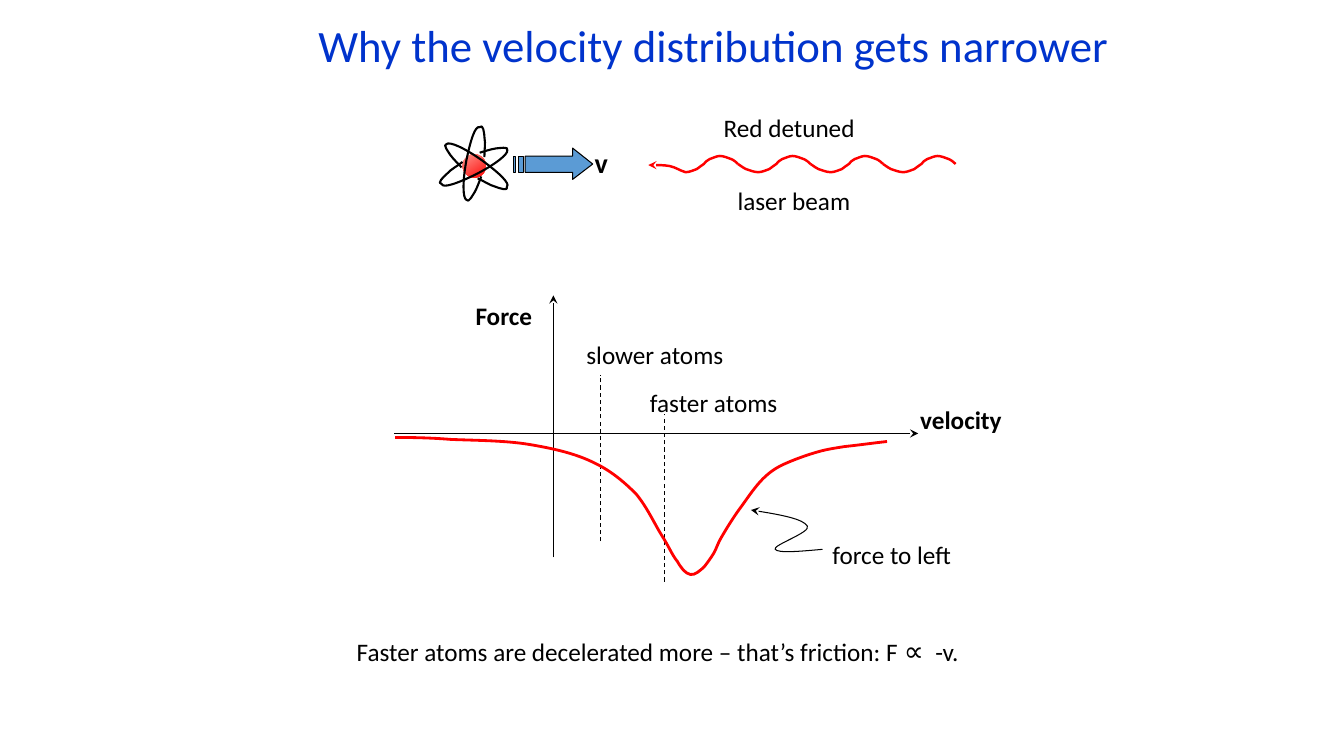
from dataclasses import dataclass

from lxml import etree
from pptx import Presentation
from pptx.dml.color import RGBColor
from pptx.enum import dml, shapes, text
from pptx.oxml import ns
from pptx.util import Pt


@dataclass(frozen=True)
class Theme:
    """Colours and type sizes of the slide."""
    font: str = "Calibri"
    ink: RGBColor = RGBColor(0x00, 0x00, 0x00)
    title: RGBColor = RGBColor(0x00, 0x33, 0xCC)
    red: RGBColor = RGBColor(0xFE, 0x00, 0x00)
    pale_red: RGBColor = RGBColor(0xFE, 0xA2, 0x98)
    curve: RGBColor = RGBColor(0xFF, 0x00, 0x00)
    arrow: RGBColor = RGBColor(0x5B, 0x9B, 0xD5)
    title_size: int = 32
    symbol_size: int = 20
    body_size: int = 18


theme = Theme()
deck = Presentation()
deck.slide_width, deck.slide_height = Pt(960), Pt(540)
page = deck.slides.add_slide(deck.slide_layouts[6])


def stroke(shape, color, width, arrowhead=False):
    """Set the line of a shape, with a stealth arrowhead at its end if asked."""
    shape.line.color.rgb = color
    shape.line.width = Pt(width)
    if arrowhead:
        line = shape.line._get_or_add_ln()
        etree.SubElement(line, ns.qn("a:tailEnd"), type="stealth")


def draw_curve(points, color, width, arrowhead=False):
    """Draw an open Bezier path: a start, then two controls and an end per segment."""
    start, *rest = [(Pt(x), Pt(y)) for x, y in points]
    builder = page.shapes.build_freeform(*start)
    builder.add_line_segments(rest, close=False)
    shape = builder.convert_to_shape()
    steps = shape._element.xpath(".//a:lnTo")
    for i in range(0, len(steps), 3):
        bezier = etree.Element(ns.qn("a:cubicBezTo"))
        steps[i].addprevious(bezier)
        for step in steps[i:i + 3]:
            bezier.append(step[0])
            step.getparent().remove(step)
    shape.fill.background()
    shape.shadow.inherit = False
    stroke(shape, color, width, arrowhead)
    return shape


# Laser beam: four wave periods, the last one running out into the arrowhead
WAVE_START = [
    (0, 0), (-0.7, -0.7), (-2.9, -2.9), (-5, -3.6),
    (-7.2, -4.3), (-10.1, -5.8), (-13, -5.8),
    (-15.1, -5.8), (-18, -4.3), (-20.2, -3.6),
    (-22.3, -2.9), (-23, -1.4), (-24.5, 0),
    (-25.9, 0.7), (-27.4, 2.2), (-29.5, 3.6),
    (-31.7, 4.3), (-34.6, 5.8), (-37.4, 5.8),
]
WAVE_END = [(-40.3, 5.8), (-43.9, 4.3), (-46.1, 3.6),
            (-49, 2.2), (-50.4, 0.7), (-51.8, 0)]
WAVE_TIP = [(-41, 5), (-44.6, 2.2), (-49, 1.4),
            (-53.3, 0.7), (-61.2, 0.7), (-64.1, 0.7)]
for period in range(4):
    is_tip = period == 3
    wave = WAVE_START + (WAVE_TIP if is_tip else WAVE_END)
    right = 682.6 - 51.8 * period
    draw_curve([(right + x, 117.2 + y) for x, y in wave],
               theme.curve, 1.75, arrowhead=is_tip)

# Atom: a nucleus and one orbit turned three ways
nucleus = page.shapes.add_shape(
    shapes.MSO_SHAPE.OVAL, Pt(330.5), Pt(110.2), Pt(16.6), Pt(16.6))
nucleus.rotation = 10.6
nucleus.shadow.inherit = False
nucleus.line.fill.background()
nucleus.fill.gradient()
nucleus.fill.gradient_angle = 315
for stop, color, position in zip(nucleus.fill.gradient_stops,
                                 (theme.pale_red, theme.red), (0, 1)):
    stop.color.rgb = color
    stop.position = position

ORBIT = [
    (3.5, 8.3), (7.4, 8.5), (13.3, 10.3), (17, 9.9),
    (20.9, 10.1), (27.7, 10.1), (25.2, 7.1),
    (26.6, 4.4), (17.4, -0.1), (2.2, -4.9),
    (-12.2, -9.2), (-24, -10.5), (-25.4, -7.8),
    (-28.2, -6.8), (-22.2, -2.8), (-20.2, -1.2),
    (-17.2, 0.9), (-11.7, 3.6), (-9.9, 4.5),
]
for center_x, center_y, angle in [(340.6, 118.4, 18.6), (338.4, 117, 263.6),
                                  (339.1, 119.2, 136.1)]:
    orbit = draw_curve([(center_x + x, center_y + y) for x, y in ORBIT], theme.ink, 1.5)
    orbit.rotation = angle

# Velocity arrow with two stripes behind it
ARROW = [(409, 105.8), (409, 111.6), (375.1, 111.6), (375.1, 123.1),
         (409, 123.1), (409, 128.2), (423.4, 117.2)]
STRIPES = [[(left, 111.6), (left, 123.1), (right, 123.1), (right, 111.6)]
           for left, right in [(370.1, 373.7), (366.5, 367.9)]]
builder = page.shapes.build_freeform(Pt(ARROW[0][0]), Pt(ARROW[0][1]))
for index, contour in enumerate([ARROW, *STRIPES]):
    corners = [(Pt(x), Pt(y)) for x, y in contour]
    if index:
        builder.move_to(*corners[0])
    builder.add_line_segments(corners[1:], close=True)
velocity_arrow = builder.convert_to_shape()
velocity_arrow.shadow.inherit = False
velocity_arrow.fill.solid()
velocity_arrow.fill.fore_color.rgb = theme.arrow
stroke(velocity_arrow, theme.ink, 0.75)

# Axes with arrowheads, and dashed markers for the two groups of atoms
for x1, y1, x2, y2, is_axis in [
    (474.5, 415.4, 474.5, 295.9, False),
    (429.1, 386.6, 429.1, 267.8, False),
    (281.5, 309.6, 655.9, 309.6, True),
    (395.3, 398.2, 395.3, 211, True),
]:
    rule = page.shapes.add_connector(
        shapes.MSO_CONNECTOR.STRAIGHT, Pt(x1), Pt(y1), Pt(x2), Pt(y2))
    etree.SubElement(rule._element.spPr, ns.qn("a:effectLst"))
    if not is_axis:
        rule.line.dash_style = dml.MSO_LINE.DASH
    stroke(rule, theme.ink, 0.75, arrowhead=is_axis)

# Pointer from the label to the force curve
draw_curve([
    (587.5, 392.4), (571.7, 393.8), (555.8, 395.3), (553.7, 392.4),
    (551.5, 389.5), (579.6, 380.2), (576.7, 375.8),
    (573.8, 370.8), (555.1, 367.2), (536.4, 364.3),
], theme.ink, 0.75, arrowhead=True)

# Force against velocity
draw_curve([
    (282.2, 312.5), (288.7, 312.5), (305.3, 312.5), (321.8, 313.9),
    (337.7, 314.6), (360.7, 314.6), (378, 317.5),
    (395.3, 320.4), (411.1, 324), (424.1, 330.5),
    (436.3, 336.2), (445.7, 344.2), (454.3, 352.8),
    (462.2, 362.2), (468, 375.1), (473, 383),
    (478.1, 391), (480.2, 396.7), (483.8, 401),
    (486.7, 406.1), (489.6, 409.7), (493.2, 410.4),
    (496.1, 411.1), (500.4, 407.5), (503.3, 404.6),
    (505.4, 401.8), (507.6, 398.9), (509.8, 395.3),
    (511.9, 391.7), (512.6, 388.1), (516.2, 382.3),
    (519.1, 377.3), (524.9, 367.9), (529.9, 361.4),
    (535, 354.2), (540, 347), (545, 342),
    (550.1, 337), (554.4, 334.1), (560.9, 331.2),
    (567.4, 328.3), (575.3, 325.4), (582.5, 323.3),
    (589.7, 321.1), (594.7, 320.4), (603.4, 319),
    (611.3, 318.2), (627.1, 316.1), (633.6, 315.4),
], theme.curve, 2)

# Title, labels and conclusion; each holds a list of spans
TITLE = "Why the velocity distribution gets narrower"
CONCLUSION = ["Faster atoms are decelerated more – that’s friction: F ", "∝", "  -v."]
body, symbol = theme.body_size, theme.symbol_size
for spans, left, top, width, height, size, bold in [
    ([TITLE], 220.3, 9.4, 599, 46.1, theme.title_size, False),
    (["Red detuned"], 509.8, 77, 109.4, 28.8, body, False),
    (["laser beam"], 519.8, 128.9, 95.8, 28.8, body, False),
    (["v"], 417.6, 100.1, 24.5, 31.7, symbol, True),
    (["Force"], 332.6, 211, 55.4, 28.8, body, True),
    (["velocity"], 650.2, 285.1, 73.4, 28.8, body, True),
    (["slower atoms"], 411.8, 239, 113, 28.8, body, False),
    (["faster atoms"], 457.2, 272.9, 106.6, 28.8, body, False),
    (["force to left"], 587.5, 381.6, 103.7, 28.8, body, False),
    (CONCLUSION, 247.7, 449.3, 451.4, 31.7, body, False),
]:
    is_title = spans == [TITLE]
    box = page.shapes.add_textbox(Pt(left), Pt(top), Pt(width), Pt(height))
    box.text_frame.word_wrap = is_title
    box.text_frame.auto_size = text.MSO_AUTO_SIZE.SHAPE_TO_FIT_TEXT
    para = box.text_frame.paragraphs[0]
    para.font.name = theme.font
    para.font.size = Pt(size)
    para.font.bold = bold
    para.font.color.rgb = theme.title if is_title else theme.ink
    for words in spans:
        span = para.add_run()
        span.text = words
        if words == "∝":
            span.font.size = Pt(symbol)

deck.save("out.pptx")
